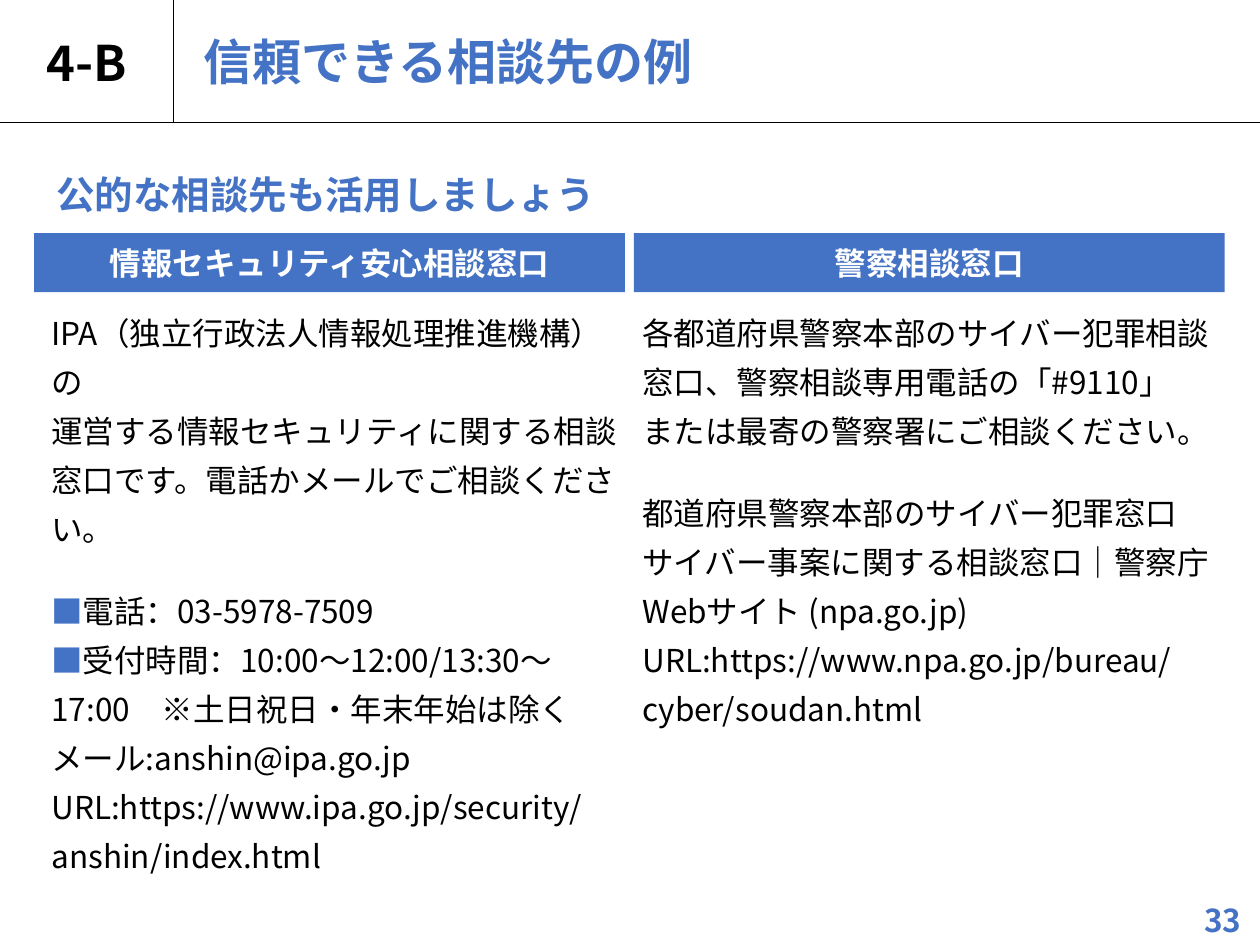
from lxml.etree import SubElement
from pptx import Presentation
from pptx.dml.color import RGBColor
from pptx.enum.shapes import MSO_CONNECTOR, MSO_SHAPE
from pptx.enum.text import MSO_ANCHOR as Anchor, PP_ALIGN as Align
from pptx.oxml.ns import qn
from pptx.util import Inches, Pt

FONT = "Noto Sans CJK JP"
COLORS = {"blue": "4472C4", "black": "000000", "white": "FFFFFF"}
MARK = "■"
LINE_SPACING = 1.3
GROUP_GAP = 18.7

SECTION = "4-B"
TITLE = "信頼できる相談先の例"
LEAD = "公的な相談先も活用しましょう"
PAGE_NUMBER = "33"
COLUMNS = [
    {
        "heading": "情報セキュリティ安心相談窓口",
        "left": 0.27,
        "text_left": 0.31,
        "groups": [
            [
                "IPA（独立行政法人情報処理推進機構）の",
                "運営する情報セキュリティに関する相談",
                "窓口です。電話かメールでご相談ください。",
            ],
            [
                "■電話：03-5978-7509",
                "■受付時間：10:00～12:00/13:30～17:00　※土日祝日・年末年始は除く",
                "メール:anshin@ipa.go.jp",
                "URL:https://www.ipa.go.jp/security/anshin/index.html",
            ],
        ],
    },
    {
        "heading": "警察相談窓口",
        "left": 5.03,
        "text_left": 5,
        "groups": [
            [
                "各都道府県警察本部のサイバー犯罪相談窓口、警察相談専用電話の「#9110」",
                "または最寄の警察署にご相談ください。",
            ],
            [
                "都道府県警察本部のサイバー犯罪窓口",
                "サイバー事案に関する相談窓口｜警察庁Webサイト (npa.go.jp)",
                "URL:https://www.npa.go.jp/bureau/cyber/soudan.html",
            ],
        ],
    },
]
COLUMN_WIDTH = 4.69
RULES = [(1.38, 0.97, 1.38, 0), (-0.04, 0.97, 10, 0.97)]


def color(name):
    return RGBColor.from_string(COLORS[name])


def add_span(para, text, size, color_name, bold=False):
    span = para.add_run()
    span.text = text
    span.font.size = Pt(size)
    span.font.bold = bold
    span.font.name = FONT
    span.font.color.rgb = color(color_name)
    SubElement(span._r.get_or_add_rPr(), qn("a:ea"), typeface=FONT)


def add_box(page, place, anchor=Anchor.TOP):
    box = page.shapes.add_textbox(*map(Inches, place))
    box.text_frame.word_wrap = True
    box.text_frame.vertical_anchor = anchor
    return box


def add_label(page, place, text, size, color_name, align=Align.LEFT, anchor=Anchor.TOP):
    box = add_box(page, place, anchor)
    para = box.text_frame.paragraphs[0]
    para.alignment = align
    add_span(para, text, size, color_name, bold=True)
    return para


def add_rule(page, ends):
    rule = page.shapes.add_connector(MSO_CONNECTOR.STRAIGHT, *map(Inches, ends))
    rule.line.color.rgb = color("black")
    rule.line.width = Pt(0.5)
    SubElement(rule._element.spPr, qn("a:effectLst"))


def add_heading(page, column):
    place = (column["left"], 1.85, COLUMN_WIDTH, 0.47)
    bar = page.shapes.add_shape(MSO_SHAPE.RECTANGLE, *map(Inches, place))
    bar.shadow.inherit = False
    bar.fill.solid()
    bar.fill.fore_color.rgb = color("blue")
    bar.line.fill.background()
    bar.text_frame.vertical_anchor = Anchor.MIDDLE
    para = bar.text_frame.paragraphs[0]
    para.alignment = Align.CENTER
    add_span(para, column["heading"], 18, "white", bold=True)


def add_body(page, column):
    frame = add_box(page, (column["text_left"], 2.35, COLUMN_WIDTH, 3.85)).text_frame
    frame.margin_right = Inches(0.04)
    para = frame.paragraphs[0]
    for group_index, group in enumerate(column["groups"]):
        for line_index, line in enumerate(group):
            if group_index or line_index:
                para = frame.add_paragraph()
            para.line_spacing = LINE_SPACING
            if group_index and line_index == 0:
                para.space_before = Pt(GROUP_GAP)
            if line.startswith(MARK):
                add_span(para, MARK, 18, "blue")
            add_span(para, line.removeprefix(MARK), 18, "black")


def main():
    deck = Presentation()
    deck.slide_width, deck.slide_height = Inches(10), Inches(7.5)
    page = deck.slides.add_slide(deck.slide_layouts[6])
    for ends in RULES:
        add_rule(page, ends)
    add_label(page, (0, 0, 1.38, 0.98), SECTION, 28, "black", Align.CENTER, Anchor.MIDDLE)
    add_label(page, (1.52, 0.24, 8.29, 0.53), TITLE, 28, "blue", anchor=Anchor.BOTTOM)
    lead = add_label(page, (0.35, 1.2, 9.31, 0.56), LEAD, 22, "blue")
    lead.line_spacing = LINE_SPACING
    for column in COLUMNS:
        add_heading(page, column)
        add_body(page, column)
    add_label(page, (9.41, 7.1, 0.59, 0.4), PAGE_NUMBER, 18, "blue", Align.CENTER)
    deck.save("out.pptx")


if __name__ == "__main__":
    main()
